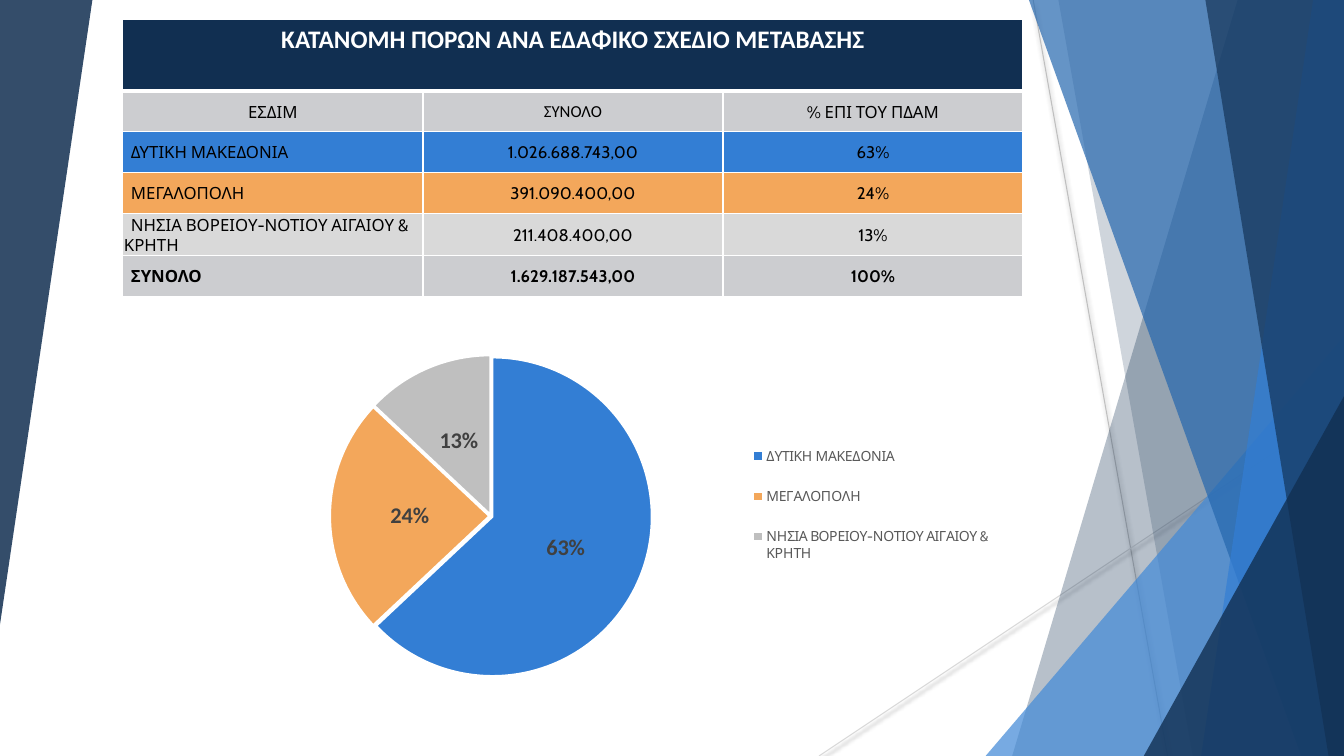
import pptx
import pptx.chart.data
import pptx.dml.color
import pptx.enum.chart
import pptx.enum.shapes
import pptx.enum.text
import pptx.oxml
import pptx.oxml.ns
import pptx.util

Pt = pptx.util.Pt
NS = pptx.oxml.ns.nsdecls
NAVY, BLUE, ORANGE = "112F51", "337ED4", "F3A75B"
PALE, MIST, WHITE = "CCCDD0", "D9D9D9", "FFFFFF"
REGIONS = ["ΔΥΤΙΚΗ ΜΑΚΕΔΟΝΙΑ", "ΜΕΓΑΛΟΠΟΛΗ", "ΝΗΣΙΑ ΒΟΡΕΙΟΥ-ΝΟΤΙΟΥ ΑΙΓΑΙΟΥ & ΚΡΗΤΗ"]


def rgb(color):
    """Return the colour object for a hex string."""
    return pptx.dml.color.RGBColor.from_string(color)


def set_font(font, size, color, name="Cabin", bold=False):
    """Set size, colour, face and weight of a font."""
    font.size, font.name, font.bold = Pt(size), name, bold
    font.color.rgb = rgb(color)


def paint(sp, color, opacity):
    """Fill a shape with a see-through colour, without line or shadow."""
    sp.shadow.inherit = False
    sp.fill.solid()
    sp.fill.fore_color.rgb = rgb(color)
    sp.line.fill.background()
    clr = sp.fill._xPr.find(".//" + pptx.oxml.ns.qn("a:srgbClr"))
    clr.append(pptx.oxml.parse_xml(f'<a:alpha {NS("a")} val="{opacity * 1000}"/>'))


def add_triangle(slide, box, color, opacity, rotation=0):
    """Add a right-angled triangle with its apex at the right."""
    kind = pptx.enum.shapes.MSO_SHAPE.ISOSCELES_TRIANGLE
    sp = slide.shapes.add_shape(kind, *map(Pt, box))
    sp.adjustments[0] = 1
    sp.rotation = rotation
    paint(sp, color, opacity)


def add_shard(slide, box, top, bottom, color, opacity):
    """Add a band from a slanted left edge to the right side of the box."""
    x, y, w, h = box
    fb = slide.shapes.build_freeform(Pt(x + top), Pt(y))
    corners = [(x + w, y), (x + w, y + h), (x + bottom, y + h)]
    fb.add_line_segments([(Pt(a), Pt(b)) for a, b in corners])
    paint(fb.convert_to_shape(), color, opacity)


def add_ray(slide, ends, color):
    """Add a thin line with a soft shadow below it."""
    kind = pptx.enum.shapes.MSO_CONNECTOR.STRAIGHT
    line = slide.shapes.add_connector(kind, *map(Pt, ends))
    line.line.color.rgb = rgb(color)
    line.line.width = Pt(0.75)
    line._element.spPr.append(pptx.oxml.parse_xml(
        f'<a:effectLst {NS("a")}><a:outerShdw blurRad="{Pt(3)}" dist="{Pt(2)}" dir="5400000">'
        '<a:srgbClr val="000000"><a:alpha val="40000"/></a:srgbClr></a:outerShdw></a:effectLst>'))


def add_facets(slide, box):
    """Draw the layered facets along the right side."""
    x, y, w, h = box
    add_ray(slide, (x + 153, y, x + 249, y + h), "BFBFBF")
    add_ray(slide, (x + w, y + 290, x, y + h), MIST)
    add_shard(slide, box, 299, 138, NAVY, 30)
    add_shard(slide, box, 171, 267, NAVY, 20)
    add_triangle(slide, (x + w - 256, y + h - 300, 256, 300), "438AD7", 72)
    add_shard(slide, box, 150, 344.5, "2567AE", 70)
    add_shard(slide, box, 353, 273, BLUE, 70)
    add_shard(slide, box, 276, 364, NAVY, 65)
    add_triangle(slide, (x + w - 143, y + h - 257, 143, 257), NAVY, 80)


def fill_cell(cell, text, fill, size=12, color="000000", name="Cabin", bold=False, centred=True):
    """Fill one table cell with a single run of text."""
    cell.fill.solid()
    cell.fill.fore_color.rgb = rgb(fill)
    p = cell.text_frame.paragraphs[0]
    align = pptx.enum.text.PP_ALIGN
    p.alignment = align.CENTER if centred else align.LEFT
    if not centred:
        p._p.get_or_add_pPr().set("indent", str(Pt(5)))
    r = p.add_run()
    r.text = text
    set_font(r.font, size, color, name, bold)


def add_borders(cell, bottom=1):
    """Give a cell white borders."""
    tcPr = cell._tc.get_or_add_tcPr()
    for i, (side, width) in enumerate([("L", 1), ("R", 1), ("T", 1), ("B", bottom)]):
        tcPr.insert(i, pptx.oxml.parse_xml(
            f'<a:ln{side} {NS("a")} w="{Pt(width)}"><a:solidFill>'
            f'<a:srgbClr val="{WHITE}"/></a:solidFill></a:ln{side}>'))


def add_funds_table(slide, box):
    """Add the table of funds by territorial plan."""
    rows = [
        (PALE, "ΕΣΔΙΜ", "ΣΥΝΟΛΟ", "% ΕΠΙ ΤΟΥ ΠΔΑΜ"),
        (BLUE, REGIONS[0], "1.026.688.743,00", "63%"),
        (ORANGE, REGIONS[1], "391.090.400,00", "24%"),
        (MIST, REGIONS[2], "211.408.400,00", "13%"),
        (PALE, "ΣΥΝΟΛΟ", "1.629.187.543,00", "100%"),
    ]
    title_height = 51
    table = slide.shapes.add_table(len(rows) + 1, 3, *map(Pt, box)).table
    table.horz_banding = False
    for col in table.columns:
        col.width = Pt(box[2] / 3)
    for row in table.rows:
        row.height = Pt((box[3] - title_height) / len(rows))
    table.rows[0].height = Pt(title_height)
    title = table.cell(0, 0)
    title.merge(table.cell(0, 2))
    fill_cell(title, "ΚΑΤΑΝΟΜΗ ΠΟΡΩΝ ΑΝΑ ΕΔΑΦΙΚΟ ΣΧΕΔΙΟ ΜΕΤΑΒΑΣΗΣ", NAVY, 18, WHITE, "Calibri", True)
    for j in range(3):
        add_borders(table.cell(0, j), 3)
    for i, (fill, *texts) in enumerate(rows, 1):
        for j, text in enumerate(texts):
            cell = table.cell(i, j)
            cell.vertical_anchor = pptx.enum.text.MSO_ANCHOR.MIDDLE
            cell.margin_left = cell.margin_right = cell.margin_top = Pt(0.75)
            cell.margin_bottom = 0
            name = "Calibri" if (i, j) == (1, 1) else "Cabin"
            fill_cell(cell, text, fill, name=name, bold=i == len(rows), centred=i == 1 or j > 0)
            add_borders(cell)


def set_layout(parent, index, target, box):
    """Place a chart part at fractions of the chart area."""
    for old in parent.findall(pptx.oxml.ns.qn("c:layout")):
        parent.remove(old)
    sizes = "".join(f'<c:{k} val="{v}"/>' for k, v in zip("xywh", box))
    parent.insert(index, pptx.oxml.parse_xml(
        f'<c:layout {NS("c")}><c:manualLayout>{target}<c:xMode val="edge"/>'
        f'<c:yMode val="edge"/>{sizes}</c:manualLayout></c:layout>'))


def add_share_pie(slide, box):
    """Add the pie of each region's share with its legend."""
    data = pptx.chart.data.CategoryChartData(number_format="0%")
    data.categories = REGIONS
    data.add_series("Series 1", (0.63, 0.24, 0.13))
    kind = pptx.enum.chart.XL_CHART_TYPE.PIE
    chart = slide.shapes.add_chart(kind, *map(Pt, box), data).chart
    chart.has_title = False
    set_font(chart.font, 10, "000000")
    chart.has_legend = True
    legend = chart.legend
    legend.position = pptx.enum.chart.XL_LEGEND_POSITION.RIGHT
    legend.include_in_layout = False
    set_font(legend.font, 10, "595959")
    plot = chart.plots[0]
    plot.vary_by_categories = True
    series = plot.series[0]
    for i, color in enumerate((BLUE, ORANGE, "BFBFBF")):
        fmt = series.points[i].format
        fmt.fill.solid()
        fmt.fill.fore_color.rgb = rgb(color)
        fmt.line.color.rgb = rgb(WHITE)
        fmt.line.width = Pt(1.5)
    series._element.insert_element_before(
        pptx.oxml.parse_xml(f'<c:explosion {NS("c")} val="1"/>'),
        "c:dPt", "c:dLbls", "c:cat", "c:val")
    labels = series.data_labels
    labels.show_value = True
    labels.number_format, labels.number_format_is_linked = "0%", False
    labels.position = pptx.enum.chart.XL_LABEL_POSITION.CENTER
    set_font(labels.font, 16, "404040", "Calibri", True)
    set_layout(chart._chartSpace.chart.plotArea, 0, '<c:layoutTarget val="inner"/>',
               (0.02, 0.15, 0.63, 0.7))
    set_layout(legend._element, 1, "", (0.67, 0.3, 0.32, 0.35))


def main():
    """Build the slide and save it."""
    prs = pptx.Presentation()
    prs.slide_width, prs.slide_height = Pt(960), Pt(540)
    slide = prs.slides.add_slide(prs.slide_layouts[6])
    add_facets(slide, (585, 0, 375, 540))
    add_triangle(slide, (0, 0, 66, 446), NAVY, 85, 180)
    add_funds_table(slide, (87.75, 14, 643, 197))
    add_share_pie(slide, (167, 204.5, 548.5, 328.5))
    prs.save("out.pptx")


if __name__ == "__main__":
    main()
